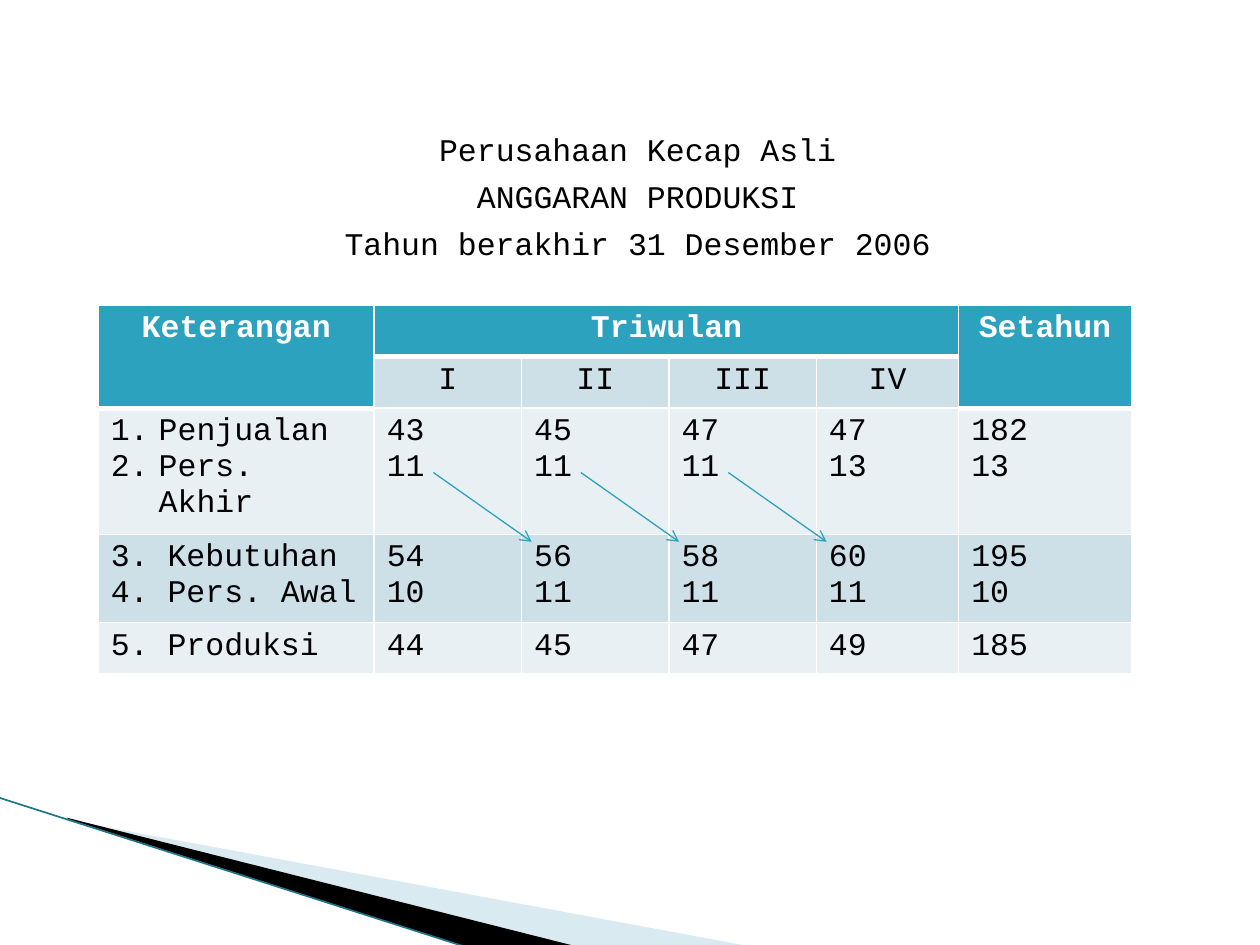
from typing import NamedTuple

import pptx
import pptx.dml.color
import pptx.enum.shapes
import pptx.enum.text
import pptx.oxml
import pptx.oxml.ns
import pptx.util
from pptx.util import Inches

COLORS = {
    "header": "2DA2BF",
    "band_dark": "CDE0E8",
    "band_light": "E8F0F4",
    "white": "FFFFFF",
    "black": "000000",
    "wedge": "A0CBDC",
    "edge": "1F7488",
}
FONT = {"name": "Courier New", "size": pptx.util.Pt(18)}
CENTER = pptx.enum.text.PP_ALIGN.CENTER
LEFT = pptx.enum.text.PP_ALIGN.LEFT


class Wedge(NamedTuple):
    points: list[tuple[float, float]]
    color: str
    alpha: int


class Line(NamedTuple):
    start: tuple[float, float]
    end: tuple[float, float]
    color: str
    width: float
    arrow: bool


class CellStyle(NamedTuple):
    fill: str
    color: str
    bold: bool
    align: int
    bottom: float = 1


HEADER = CellStyle("header", "white", True, CENTER, 3)
QUARTER = CellStyle("band_dark", "black", False, CENTER)
LIGHT = CellStyle("band_light", "black", False, LEFT)
DARK = CellStyle("band_dark", "black", False, LEFT)

WEDGES = [
    Wedge([(0.55, 6.51), (5.95, 7.51), (4.56, 7.51), (0.55, 6.5)], "wedge", 40),
    Wedge([(0.53, 6.49), (4.57, 7.51), (3.72, 7.52), (0.54, 6.5)], "black", 100),
]
EDGE = Line((-0.01, 6.33), (3.71, 7.52), "edge", 0.95, False)
COLUMN_WIDTHS = [2.19, 1.17, 1.17, 1.17, 1.13, 1.37]
ROW_HEIGHT = 0.41
ARROWS = [
    Line((3.44 + 1.17 * i, 3.75), (4.22 + 1.17 * i, 4.3), "header", 0.75, True)
    for i in range(3)
]
TITLE = ["Perusahaan Kecap Asli", "ANGGARAN PRODUKSI", "Tahun berakhir 31 Desember 2006"]
ROWS = [
    (HEADER, ["Keterangan", "Triwulan", "", "", "", "Setahun"]),
    (QUARTER, ["", "I", "II", "III", "IV", ""]),
    (LIGHT, ["Penjualan\nPers. Akhir", "43\n11", "45\n11", "47\n11", "47\n13", "182\n13"]),
    (DARK, ["3. Kebutuhan\n4. Pers. Awal", "54\n10", "56\n11", "58\n11", "60\n11", "195\n10"]),
    (LIGHT, ["5. Produksi", "44", "45", "47", "49", "185"]),
]


def rgb(name: str) -> pptx.dml.color.RGBColor:
    return pptx.dml.color.RGBColor.from_string(COLORS[name])


def add_element(parent, xml: str) -> None:
    """Append the element, giving its tag the drawing namespace."""
    namespace = pptx.oxml.ns.nsdecls("a")
    parent.append(pptx.oxml.parse_xml(xml.replace("NS", namespace, 1)))


def write_lines(frame, lines: list[str], color: str, bold: bool, align: int) -> None:
    for index, line in enumerate(lines):
        paragraph = frame.paragraphs[0] if index == 0 else frame.add_paragraph()
        paragraph.alignment = align
        run = paragraph.add_run()
        run.text = line
        for name, value in (FONT | {"bold": bold}).items():
            setattr(run.font, name, value)
        run.font.color.rgb = rgb(color)


def set_indent(paragraph, left: float, first: float) -> None:
    properties = paragraph._p.get_or_add_pPr()
    properties.set("marL", str(Inches(left)))
    properties.set("indent", str(Inches(first)))


def draw_wedge(slide, wedge: Wedge) -> None:
    points = [(Inches(x), Inches(y)) for x, y in wedge.points]
    builder = slide.shapes.build_freeform(*points[0])
    builder.add_line_segments(points[1:], close=True)
    shape = builder.convert_to_shape()
    shape.shadow.inherit = False
    shape.line.fill.background()
    shape.fill.solid()
    shape.fill.fore_color.rgb = rgb(wedge.color)
    if wedge.alpha < 100:
        color = shape._element.spPr.find(".//" + pptx.oxml.ns.qn("a:srgbClr"))
        add_element(color, f'<a:alpha NS val="{wedge.alpha * 1000}"/>')


def draw_line(slide, line: Line) -> None:
    connector = slide.shapes.add_connector(
        pptx.enum.shapes.MSO_CONNECTOR.STRAIGHT,
        *(Inches(value) for value in line.start + line.end),
    )
    connector.line.color.rgb = rgb(line.color)
    connector.line.width = pptx.util.Pt(line.width)
    if line.arrow:
        add_element(connector.line._get_or_add_ln(), '<a:tailEnd NS type="arrow"/>')
    add_element(connector._element.spPr, "<a:effectLst NS/>")


def draw_title(slide) -> None:
    box = slide.shapes.add_textbox(Inches(0.5), Inches(0.94), Inches(9), Inches(1.2))
    frame = box.text_frame
    frame.word_wrap = True
    frame.margin_top = Inches(0.09)
    write_lines(frame, TITLE, "black", False, CENTER)
    for index, paragraph in enumerate(frame.paragraphs):
        set_indent(paragraph, 0.4, -0.28)
        paragraph.space_before = pptx.util.Pt(5.3 if index else 0)


def style_cell(cell, style: CellStyle) -> None:
    """Set borders before the fill, as the schema orders them."""
    properties = cell._tc.get_or_add_tcPr()
    for side, width in {"L": 1, "R": 1, "T": 1, "B": style.bottom}.items():
        add_element(
            properties,
            f'<a:ln{side} NS w="{pptx.util.Pt(width)}"><a:solidFill>'
            f'<a:srgbClr val="{COLORS["white"]}"/></a:solidFill></a:ln{side}>',
        )
    cell.fill.solid()
    cell.fill.fore_color.rgb = rgb(style.fill)


def draw_budget_table(slide) -> None:
    table = slide.shapes.add_table(
        len(ROWS), len(COLUMN_WIDTHS), Inches(0.78), Inches(2.42),
        Inches(sum(COLUMN_WIDTHS)), Inches(ROW_HEIGHT * len(ROWS)),
    ).table
    for column, width in zip(table.columns, COLUMN_WIDTHS):
        column.width = Inches(width)
    for row_index, (row_style, texts) in enumerate(ROWS):
        table.rows[row_index].height = Inches(ROW_HEIGHT)
        for column_index, text in enumerate(texts):
            cell = table.cell(row_index, column_index)
            style = row_style if text else HEADER
            style_cell(cell, style)
            if text:
                write_lines(cell.text_frame, text.split("\n"), style.color, style.bold, style.align)
    for first, last in [((0, 0), (1, 0)), ((0, 1), (0, 4)), ((0, 5), (1, 5))]:
        table.cell(*first).merge(table.cell(*last))
    for paragraph in table.cell(2, 0).text_frame.paragraphs:
        set_indent(paragraph, 0.38, -0.38)
        add_element(paragraph._p.get_or_add_pPr(), '<a:buAutoNum NS type="arabicPeriod"/>')


def main() -> None:
    presentation = pptx.Presentation()
    presentation.slide_width = Inches(10)
    presentation.slide_height = Inches(7.5)
    slide = presentation.slides.add_slide(presentation.slide_layouts[6])
    for wedge in WEDGES:
        draw_wedge(slide, wedge)
    draw_line(slide, EDGE)
    draw_title(slide)
    draw_budget_table(slide)
    for arrow in ARROWS:
        draw_line(slide, arrow)
    presentation.save("out.pptx")


if __name__ == "__main__":
    main()
